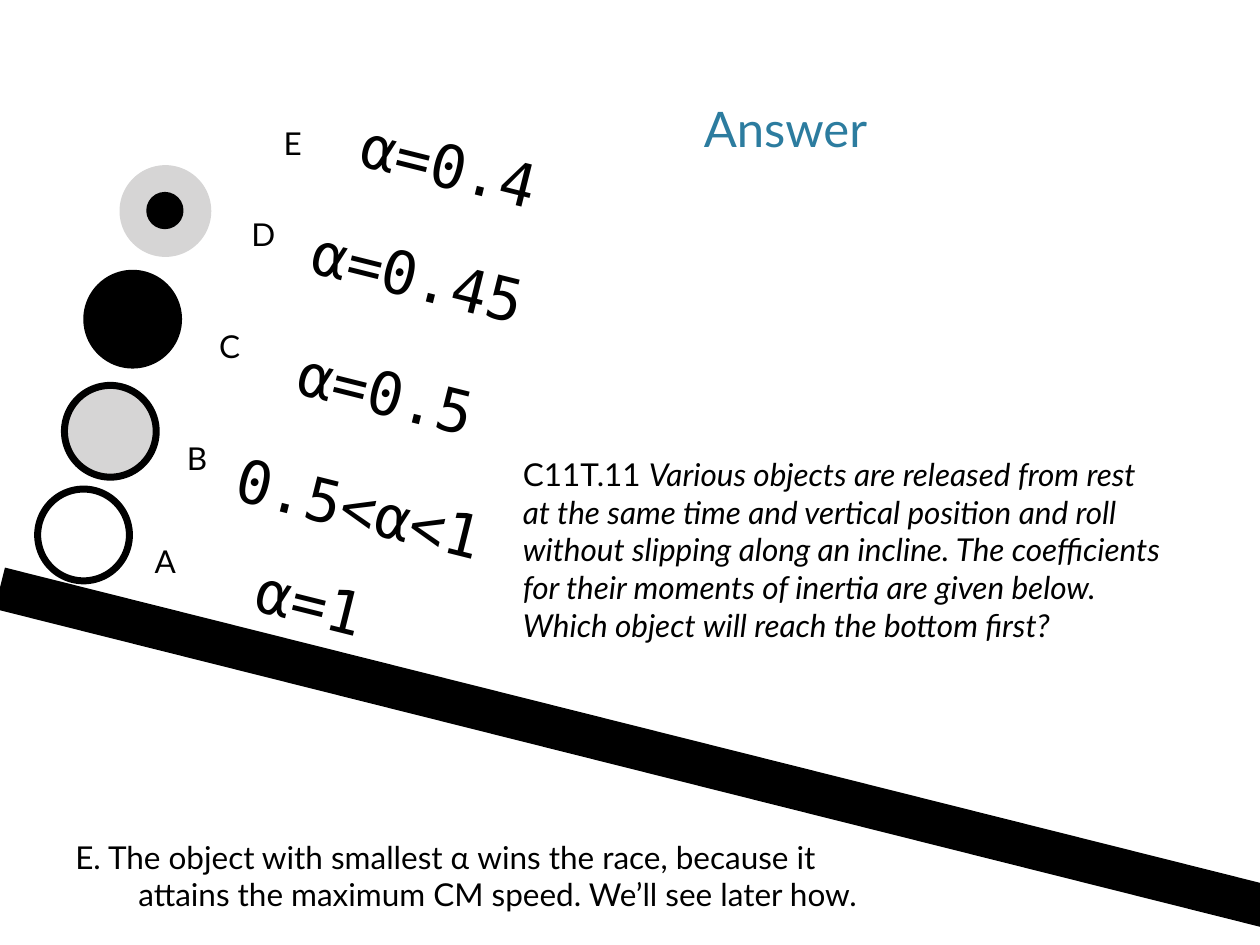
from pptx import Presentation
from pptx.dml.color import RGBColor
from pptx.enum import shapes, text
from pptx.util import Cm, Pt

THEME = {
    "black": RGBColor(0x00, 0x00, 0x00),
    "white": RGBColor(0xFF, 0xFF, 0xFF),
    "grey": RGBColor(0xD6, 0xD5, 0xD5),
    "title": RGBColor(0x2C, 0x7C, 0x9F),
    "body_font": "Lato",
    "math_font": "DejaVu Sans Mono",
    "title_size": 28,
    "body_size": 18,
    "math_size": 34,
    "outline": 4,
}

TITLE = "Answer"
QUESTION_NUMBER = "C11T.11 "
QUESTION = [
    "Various objects are released from rest",
    "at the same time and vertical position and roll",
    "without slipping along an incline. The coefficients",
    "for their moments of inertia are given below.",
    "Which object will reach the bottom first?",
]
ANSWER = [
    "E. The object with smallest α wins the race, because it",
    "attains the maximum CM speed. We’ll see later how.",
]
BALLS = [
    (0.76, 9.86, "white"),
    (1.30, 7.77, "grey"),
    (1.75, 5.51, "black"),
]
SPOOL = [
    (2.41, 3.33, 1.85, "grey", False),
    (3.02, 3.94, 0.61, "black", True),
]
LABEL_TOPS = {"A": 10.82, "B": 8.74, "C": 6.48, "D": 4.24, "E": 2.39}
COEFFICIENTS = [
    ("α=1", 5.08, 11.30),
    ("0.5<α<1", 4.62, 9.42),
    ("α=0.5", 5.89, 7.09),
    ("α=0.45", 6.17, 4.75),
    ("α=0.4", 7.16, 2.51),
]
BALL_SIZE = 1.85
LABEL_LEFT, LABEL_STEP = 3.02, 0.65
INSET, DIGIT_WIDTH = 0.1, 0.73
TILT = 14


def add_solid(parent, kind, left, top, width, height, colour, outlined=False):
    solid = parent.add_shape(kind, Cm(left), Cm(top), Cm(width), Cm(height))
    solid.shadow.inherit = False
    solid.fill.solid()
    solid.fill.fore_color.rgb = THEME[colour]
    if outlined:
        solid.line.color.rgb = THEME["black"]
        solid.line.width = Pt(THEME["outline"])
    else:
        solid.line.fill.background()
    return solid


def style(paragraph, size="body_size", font="body_font", colour="black"):
    paragraph.font.size = Pt(THEME[size])
    paragraph.font.name = THEME[font]
    paragraph.font.color.rgb = THEME[colour]


def add_words(slide, lines, left, top, width, height, inset=INSET, wrap=False,
              anchor=text.MSO_ANCHOR.MIDDLE, **look):
    box = slide.shapes.add_textbox(Cm(left), Cm(top), Cm(width), Cm(height))
    frame = box.text_frame
    frame.word_wrap = wrap
    frame.vertical_anchor = anchor
    if inset is not None:
        frame.margin_left = frame.margin_right = Cm(inset)
        frame.margin_top = frame.margin_bottom = Cm(inset)
    frame.text = "\n".join(lines)
    for paragraph in frame.paragraphs:
        style(paragraph, **look)
    return box


def add_title(slide):
    title = slide.shapes.title
    title.left, title.top = Cm(6.22), Cm(0.15)
    title.width, title.height = Cm(19.23), Cm(3.15)
    title.text_frame.text = TITLE
    title.text_frame.vertical_anchor = text.MSO_ANCHOR.BOTTOM
    heading = title.text_frame.paragraphs[0]
    heading.alignment = text.PP_ALIGN.CENTER
    style(heading, "title_size", colour="title")


def add_objects(slide):
    oval = shapes.MSO_SHAPE.OVAL
    ramp = add_solid(slide.shapes, shapes.MSO_SHAPE.RECTANGLE,
                     -0.43, 14.88, 28.32, 0.86, "black")
    ramp.rotation = 14.1
    for left, top, colour in BALLS:
        add_solid(slide.shapes, oval, left, top, BALL_SIZE, BALL_SIZE, colour, True)
    spool = slide.shapes.add_group_shape()
    for left, top, size, colour, outlined in SPOOL:
        add_solid(spool.shapes, oval, left, top, size, size, colour, outlined)


def add_labels(slide):
    for index, (letter, top) in enumerate(LABEL_TOPS.items()):
        add_words(slide, [letter], LABEL_LEFT + index * LABEL_STEP, top, 0.64, 0.97)
    for formula, left, top in COEFFICIENTS:
        width = len(formula) * DIGIT_WIDTH + 3 * INSET
        coefficient = add_words(slide, [formula], left, top, width, 1.65,
                                size="math_size", font="math_font")
        coefficient.rotation = TILT


def add_question_and_answer(slide):
    question = add_words(slide, QUESTION, 10.44, 9.07, 14.53, 4.78, wrap=True,
                         anchor=text.MSO_ANCHOR.TOP)
    for paragraph in question.text_frame.paragraphs:
        paragraph.font.italic = True
    opening = question.text_frame.paragraphs[0]
    opening.clear()
    number = opening.add_run()
    number.text = QUESTION_NUMBER
    number.font.italic = False
    opening.add_run().text = QUESTION[0]

    answer = add_words(slide, ANSWER, 1.27, 16.76, 17.68, 1.8, inset=None,
                       wrap=True, anchor=text.MSO_ANCHOR.TOP)
    answer.text_frame.paragraphs[1].level = 1


def main():
    deck = Presentation()
    deck.slide_width, deck.slide_height = Cm(25.4), Cm(19.05)
    slide = deck.slides.add_slide(deck.slide_layouts[5])
    add_objects(slide)
    add_labels(slide)
    add_question_and_answer(slide)
    add_title(slide)
    deck.save("out.pptx")


if __name__ == "__main__":
    main()
